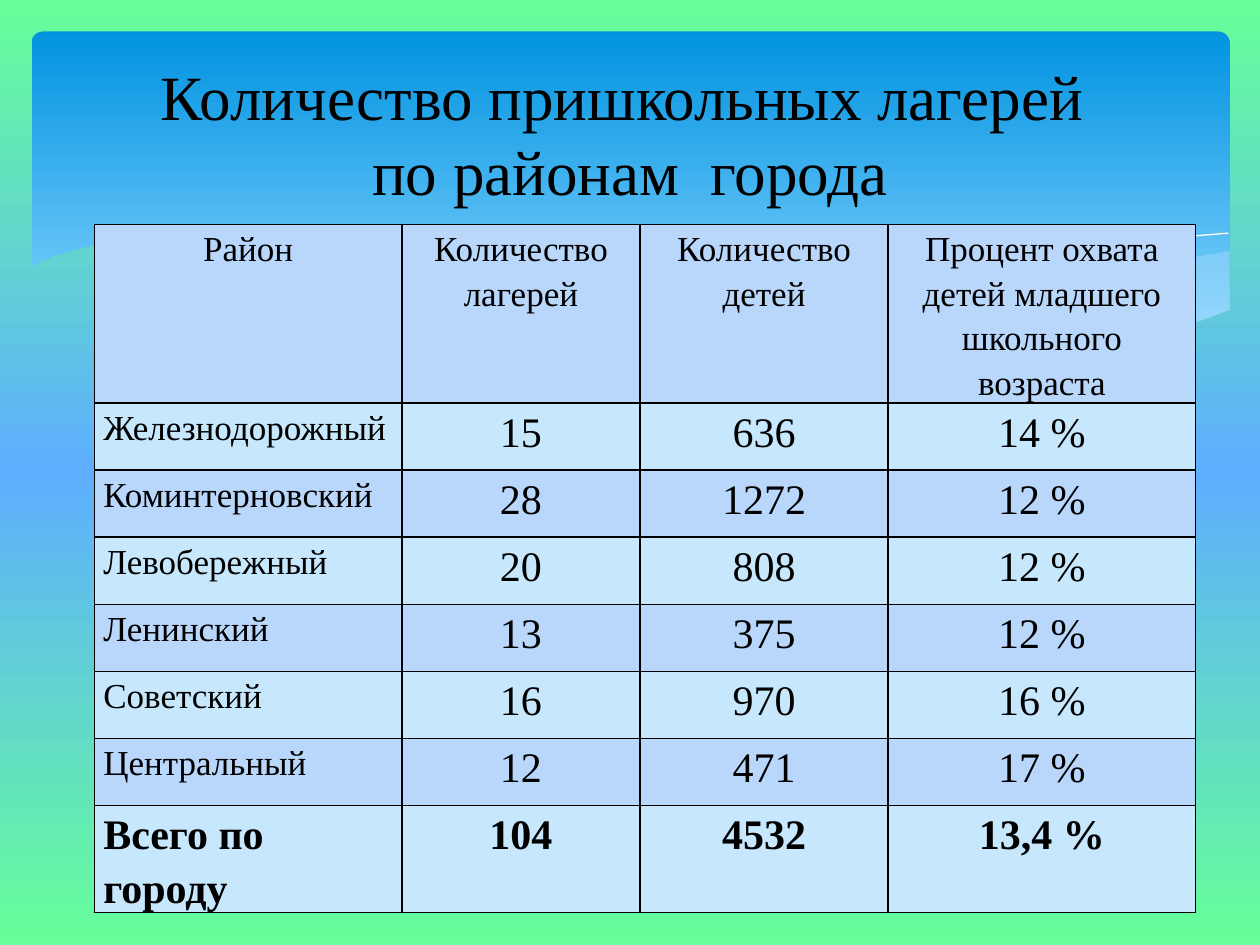
"""Build a one-slide deck with a table of school camps by city district."""
from copy import deepcopy

from lxml.etree import SubElement
from pptx import Presentation
from pptx.dml.color import RGBColor
from pptx.enum.shapes import MSO_SHAPE
from pptx.enum.text import MSO_ANCHOR, PP_ALIGN
from pptx.oxml.ns import qn
from pptx.util import Inches, Pt

COLOUR = RGBColor.from_string
FONT = "Times New Roman"
HEADER_BLUE, LIGHT_BLUE = "B9D6FB", "C6E7FC"


def fill_gradient(fill, element, stops):
    """Fill downwards with (position, colour) stops."""
    fill.gradient()
    fill.gradient_angle = 270
    stop_list = next(element.iter(qn("a:gsLst")))
    while len(stop_list) < len(stops):
        stop_list.append(deepcopy(stop_list[0]))
    for stop, (position, colour) in zip(fill.gradient_stops, stops):
        stop.position = position
        stop.color.rgb = COLOUR(colour)


def draw_outline(shapes, points, close=True):
    """Draw a freeform through points in hundredths of an inch."""
    builder = shapes.build_freeform(*points[0], scale=Inches(0.01))
    builder.add_line_segments(points[1:], close=close)
    sp = builder.convert_to_shape()
    sp.shadow.inherit = False
    sp.line.fill.background()
    return sp


prs = Presentation()
prs.slide_width, prs.slide_height = Inches(10), Inches(7.5)
s = prs.slides.add_slide(prs.slide_layouts[5])
fill_gradient(s.background.fill, s.element,
              [(0, "66FF99"), (0.5, "5EAEFF"), (1, "66FF99")])

panel = s.shapes.add_shape(MSO_SHAPE.ROUNDED_RECTANGLE,
                           Inches(0.25), Inches(0.25), Inches(9.51), Inches(2.7))
panel.adjustments[0] = 0.034
panel.shadow.inherit = False
panel.line.fill.background()
fill_gradient(panel.fill, panel.element, [(0, "0293E0"), (0.9, "83D3FE")])

swell = draw_outline(s.shapes, [
    (976, 199), (948, 204), (921, 209), (891, 216), (861, 223), (805, 237),
    (753, 248), (706, 257), (661, 265), (691, 269), (732, 274), (769, 277),
    (803, 278), (844, 277), (872, 274), (897, 270), (921, 265), (942, 259),
    (963, 252), (976, 247)])
swell.fill.solid()
swell.fill.fore_color.rgb = COLOUR(LIGHT_BLUE)
tint = next(swell.element.spPr.iter(qn("a:srgbClr")))
SubElement(tint, qn("a:alpha"), val="29000")

crest = draw_outline(s.shapes, [
    (613, 257), (652, 246), (695, 235), (748, 223), (806, 210), (866, 199),
    (895, 194), (924, 190), (951, 187), (975, 185)], close=False)
crest.fill.background()
crest.line.color.rgb = COLOUR("FFFFFF")
crest.line.width = Pt(0)

wave = draw_outline(s.shapes, [
    (977, 246), (959, 253), (940, 259), (920, 265), (899, 269), (875, 273),
    (850, 275), (809, 277), (761, 275), (708, 270), (647, 262), (579, 250),
    (529, 239), (475, 227), (418, 213), (365, 202), (315, 194), (271, 188),
    (230, 185), (193, 184), (161, 184), (132, 186), (106, 189), (85, 193),
    (67, 197), (52, 201), (40, 205), (29, 210), (23, 213), (23, 329), (977, 329)])
wave.element.remove(wave.element.find(qn("p:style")))
wave.element.set("useBgFill", "1")

title = s.shapes.title
title.element.getparent().append(title.element)
title_box = {"left": 0.5, "top": 0.37, "width": 9, "height": 1.37}
for name, value in title_box.items():
    setattr(title, name, Inches(value))
tf = title.text_frame
tf.text = "Количество пришкольных лагерей \vпо районам  города"
tf.vertical_anchor = MSO_ANCHOR.MIDDLE
tf.paragraphs[0].alignment = PP_ALIGN.CENTER
for r in tf.paragraphs[0].runs:
    for name, value in {"name": FONT, "size": Pt(36)}.items():
        setattr(r.font, name, value)
    r.font.color.rgb = COLOUR("000000")

rows = [
    ("Район", "Количество лагерей", "Количество детей",
     "Процент охвата детей младшего школьного возраста"),
    ("Железнодорожный", "15", "636", "14 %"),
    ("Коминтерновский", "28", "1272", "12 %"),
    ("Левобережный", "20", "808", "12 %"),
    ("Ленинский", "13", "375", "12 %"),
    ("Советский", "16", "970", "16 %"),
    ("Центральный", "12", "471", "17 %"),
    ("Всего по городу", "104", "4532", "13,4 %"),
]
col_widths = [2.44, 1.89, 1.97, 2.44]
row_heights = [1.1] + [3.73 / 7] * (len(rows) - 1)
table = s.shapes.add_table(len(rows), len(col_widths), Inches(0.75), Inches(1.78),
                           Inches(sum(col_widths)), Inches(sum(row_heights))).table
for column, width in zip(table.columns, col_widths):
    column.width = Inches(width)
margins = {"margin_left": 0.07, "margin_right": 0.07, "margin_top": 0, "margin_bottom": 0}

for i, values in enumerate(rows):
    table.rows[i].height = Inches(row_heights[i])
    is_header, is_total = i == 0, i == len(rows) - 1
    for j, value in enumerate(values):
        cell = table.cell(i, j)
        cell.text = value
        for name, inset in margins.items():
            setattr(cell, name, Inches(inset))
        p = cell.text_frame.paragraphs[0]
        p.line_spacing = 1.15
        p.alignment = PP_ALIGN.LEFT if j == 0 and not is_header else PP_ALIGN.CENTER
        is_small = is_header or (j == 0 and not is_total)
        style = {"name": FONT, "size": Pt(20 if is_small else 24), "bold": is_total}
        for name, setting in style.items():
            setattr(p.runs[0].font, name, setting)
        p.runs[0].font.color.rgb = COLOUR("000000")
        for side in ("lnL", "lnR", "lnT", "lnB"):
            border = SubElement(cell._tc.get_or_add_tcPr(), qn(f"a:{side}"), w=str(Pt(1)))
            SubElement(SubElement(border, qn("a:solidFill")), qn("a:srgbClr"), val="000000")
        cell.fill.solid()
        cell.fill.fore_color.rgb = COLOUR(LIGHT_BLUE if i % 2 else HEADER_BLUE)

prs.save("out.pptx")
